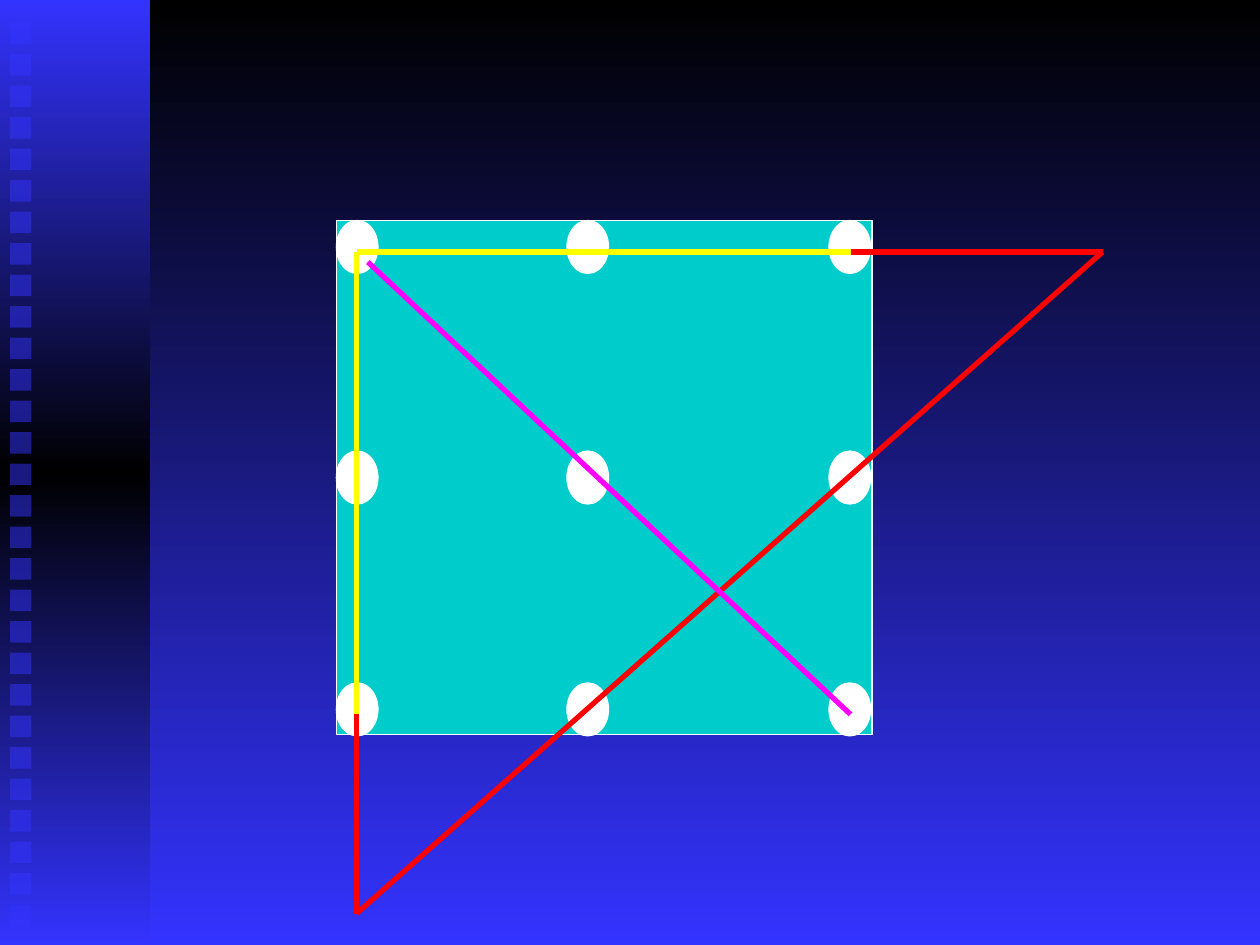
from copy import deepcopy
from dataclasses import dataclass
from itertools import product

from lxml import etree
from pptx import Presentation
from pptx.dml.color import RGBColor
from pptx.enum import shapes
from pptx.oxml import ns
from pptx.util import Inches, Pt


@dataclass(frozen=True)
class Theme:
    black: str = "000000"
    blue: str = "3333FF"
    teal: str = "00CCCC"
    white: str = "FFFFFF"
    yellow: str = "FFFF00"
    red: str = "FF0000"
    magenta: str = "FF00FF"
    outline: float = 0.75
    stroke: float = 3


THEME = Theme()
RECT = shapes.MSO_SHAPE.RECTANGLE
OVAL = shapes.MSO_SHAPE.OVAL


def rgb(colour):
    return RGBColor.from_string(colour)


def paint_gradient(fill, element, colours):
    """Evenly spaced gradient, running from top to bottom."""
    fill.gradient()
    fill.gradient_angle = 270
    stop_list = next(element.iter(ns.qn("a:gsLst")))
    while len(stop_list) < len(colours):
        stop_list.append(deepcopy(stop_list[-1]))
    for i, (stop, colour) in enumerate(zip(fill.gradient_stops, colours)):
        stop.color.rgb = rgb(colour)
        stop.position = i / (len(colours) - 1)


def add_figure(slide, preset, left, top, width, height, colour=None, line=None):
    figure = slide.shapes.add_shape(
        preset, Inches(left), Inches(top), Inches(width), Inches(height))
    figure.shadow.inherit = False
    if colour:
        figure.fill.solid()
        figure.fill.fore_color.rgb = rgb(colour)
    if line:
        figure.line.color.rgb = rgb(line)
        figure.line.width = Pt(THEME.outline)
    else:
        figure.line.fill.background()
    return figure


def set_opacity(figure, percent):
    colour = next(figure.element.spPr.iter(ns.qn("a:srgbClr")))
    etree.SubElement(colour, ns.qn("a:alpha"), val=str(percent * 1000))


def add_stroke(slide, start, end, colour):
    stroke = slide.shapes.add_connector(
        shapes.MSO_CONNECTOR.STRAIGHT, *map(Inches, start + end))
    stroke.line.color.rgb = rgb(colour)
    stroke.line.width = Pt(THEME.stroke)
    etree.SubElement(stroke.element.spPr, ns.qn("a:effectLst"))


def add_side_band(slide):
    band = add_figure(slide, RECT, 0, 0, 1.19, 7.5)
    paint_gradient(band.fill, band.element, [THEME.blue, THEME.black, THEME.blue])
    for i in range(29):
        square = add_figure(slide, RECT, 0.08, 0.18 + 0.25 * i, 0.17, 0.17, THEME.blue)
        set_opacity(square, 50)


def add_dot_board(slide):
    add_figure(slide, RECT, 2.67, 1.75, 4.25, 4.08, THEME.teal, THEME.white)
    for top, left in product((1.75, 3.58, 5.42), (2.67, 4.5, 6.58)):
        add_figure(slide, OVAL, left, top, 0.33, 0.42, THEME.white, THEME.white)


def add_solution(slide):
    corner, top_right, bottom_left = (2.83, 2), (6.75, 2), (2.83, 5.67)
    beyond_right, beyond_bottom = (8.75, 2), (2.83, 7.25)
    for start, end, colour in (
        (corner, top_right, THEME.yellow),
        (top_right, beyond_right, THEME.red),
        (beyond_bottom, beyond_right, THEME.red),
        (bottom_left, beyond_bottom, THEME.red),
        (corner, bottom_left, THEME.yellow),
        ((2.92, 2.08), (6.75, 5.67), THEME.magenta),
    ):
        add_stroke(slide, start, end, colour)


def main():
    deck = Presentation()
    deck.slide_width, deck.slide_height = Inches(10), Inches(7.5)
    slide = deck.slides.add_slide(deck.slide_layouts[6])  # blank layout

    # Backdrop
    paint_gradient(slide.background.fill, slide.element, [THEME.black, THEME.blue])
    add_side_band(slide)

    # Nine dots puzzle and its four-line solution
    add_dot_board(slide)
    add_solution(slide)

    deck.save("out.pptx")


if __name__ == "__main__":
    main()
